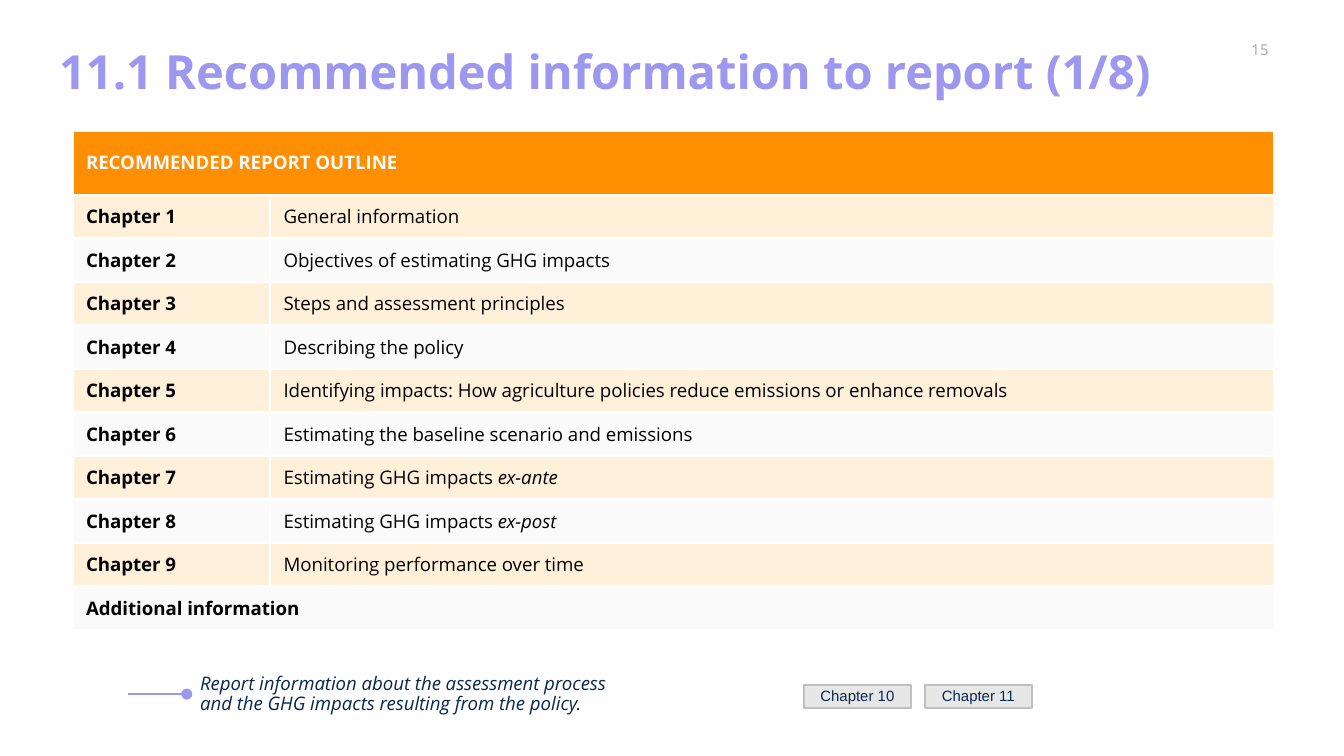
from lxml import etree
from pptx import Presentation
from pptx.dml.color import RGBColor
from pptx.enum.shapes import MSO_CONNECTOR as Connector, MSO_SHAPE as Shape
from pptx.enum.text import MSO_ANCHOR as Anchor, MSO_AUTO_SIZE as AutoSize, PP_ALIGN as Align
from pptx.oxml import parse_xml
from pptx.oxml.ns import nsdecls, qn
from pptx.util import Inches, Pt

COLORS = {
    "lilac": "9D97F0", "navy": "09294E", "orange": "FF8E00", "cream": "FFF0DA",
    "pale": "FAFAFA", "black": "000000", "white": "FFFFFF", "number": "A5A5A5",
    "button": "E7E7E7", "button_edge": "BFBFBF",
}

# Each chapter title is followed by its closing words in italics, if any.
CHAPTERS = [
    ("General information", ""),
    ("Objectives of estimating GHG impacts", ""),
    ("Steps and assessment principles", ""),
    ("Describing the policy", ""),
    ("Identifying impacts: How agriculture policies reduce emissions or enhance removals", ""),
    ("Estimating the baseline scenario and emissions", ""),
    ("Estimating GHG impacts ", "ex-ante"),
    ("Estimating GHG impacts ", "ex-post"),
    ("Monitoring performance over time", ""),
]


def rgb(name):
    return RGBColor.from_string(COLORS[name])


def write_text(frame, text, italic_tail="", size=10, color="black", font="Open Sans",
               bold=False, italic=False, align=Align.LEFT, spacing=1.0):
    frame.word_wrap = True
    paragraph = frame.paragraphs[0]
    paragraph.alignment = align
    paragraph.line_spacing = spacing
    for words, slanted in ((text, italic), (italic_tail, True)):
        if words:
            run = paragraph.add_run()
            run.text = words
            run.font.name = font
            run.font.size = Pt(size)
            run.font.bold = bold
            run.font.italic = slanted
            run.font.color.rgb = rgb(color)


def add_label(slide, left, top, width, height, text, margin=None, **text_format):
    frame = slide.shapes.add_textbox(left, top, width, height).text_frame
    frame.vertical_anchor = Anchor.MIDDLE
    if margin is not None:
        frame.margin_left = frame.margin_right = margin
        frame.margin_top = frame.margin_bottom = margin
    write_text(frame, text, **text_format)


def place_title(slide, left, top, width, height, text):
    title = slide.shapes.title
    title.left, title.top, title.width, title.height = left, top, width, height
    title.text_frame.auto_size = AutoSize.NONE
    title.text_frame.vertical_anchor = Anchor.MIDDLE
    write_text(title.text_frame, text, size=25.2, color="lilac", bold=True, spacing=0.9)


def style_cell(cell, fill):
    properties = cell._tc.get_or_add_tcPr()
    for side in ("lnL", "lnR", "lnT", "lnB"):
        properties.append(parse_xml(
            f'<a:{side} {nsdecls("a")} w="{Pt(1.5)}"><a:solidFill>'
            f'<a:srgbClr val="{COLORS["white"]}"/></a:solidFill></a:{side}>'))
    cell.fill.solid()
    cell.fill.fore_color.rgb = rgb(fill)
    cell.vertical_anchor = Anchor.MIDDLE


def add_outline_table(slide, left, top, width, height):
    row_count = len(CHAPTERS) + 2
    header_height, label_width = Inches(0.48), Inches(1.47)
    table = slide.shapes.add_table(row_count, 2, left, top, width, height).table
    table.columns[0].width = label_width
    table.columns[1].width = width - label_width
    for index, row in enumerate(table.rows):
        row.height = (height - header_height) // (row_count - 1) if index else header_height
        fill = ("pale", "cream")[index % 2] if index else "orange"
        for cell in row.cells:
            style_cell(cell, fill)

    for index in (0, row_count - 1):
        table.cell(index, 0).merge(table.cell(index, 1))
    write_text(table.cell(0, 0).text_frame, "RECOMMENDED REPORT OUTLINE", color="pale", bold=True)
    for number, (subject, italic_tail) in enumerate(CHAPTERS, 1):
        write_text(table.cell(number, 0).text_frame, f"Chapter {number}", bold=True)
        write_text(table.cell(number, 1).text_frame, subject, italic_tail)
    write_text(table.cell(row_count - 1, 0).text_frame, "Additional information", bold=True)


def add_takeaway(slide, left, top, width, height, text):
    """Place a note led in by a line that ends in a dot."""
    lead, middle = Inches(0.44), top + height // 2
    pointer = slide.shapes.add_connector(Connector.STRAIGHT, left, middle, left + lead, middle)
    pointer.line.color.rgb = rgb("lilac")
    pointer.line.width = Pt(0.75)
    etree.SubElement(pointer.line._get_or_add_ln(), qn("a:tailEnd"), type="oval")
    etree.SubElement(pointer._element.spPr, qn("a:effectLst"))
    add_label(slide, left + lead, top, width - lead, height, text,
              color="navy", italic=True, spacing=0.9)


def add_chapter_buttons(slide, left, top, width, height, labels):
    gap = Inches(0.1)
    button_width = (width - gap * (len(labels) - 1)) // len(labels)
    for index, label in enumerate(labels):
        button = slide.shapes.add_shape(
            Shape.RECTANGLE, left + index * (button_width + gap), top, button_width, height)
        button.shadow.inherit = False
        button.fill.solid()
        button.fill.fore_color.rgb = rgb("button")
        button.line.color.rgb = rgb("button_edge")
        button.line.width = Pt(1)
        button.text_frame.vertical_anchor = Anchor.MIDDLE
        write_text(button.text_frame, label, size=8, font="Arial", color="navy",
                   align=Align.CENTER, spacing=0.9)


def main():
    deck = Presentation()
    deck.slide_width = Inches(10)
    deck.slide_height = deck.slide_width * 9 // 16
    slide = deck.slides.add_slide(deck.slide_layouts[5])

    add_label(slide, Inches(8.98), Inches(0.26), Inches(0.79), Inches(0.22), "15",
              margin=0, size=8, color="number", align=Align.CENTER)
    place_title(slide, Inches(0.34), Inches(0.24), Inches(9.32), Inches(0.63),
                "11.1 Recommended information to report (1/8)")
    add_chapter_buttons(slide, Inches(5.98), Inches(5.1), Inches(1.7), Inches(0.17),
                        ["Chapter 10", "Chapter 11"])
    add_takeaway(slide, Inches(0.95), Inches(4.96), Inches(3.82), Inches(0.41),
                 "Report information about the assessment process and the GHG impacts "
                 "resulting from the policy.")
    add_outline_table(slide, Inches(0.54), Inches(0.97), Inches(8.94), Inches(3.72))
    deck.save("out.pptx")


if __name__ == "__main__":
    main()
